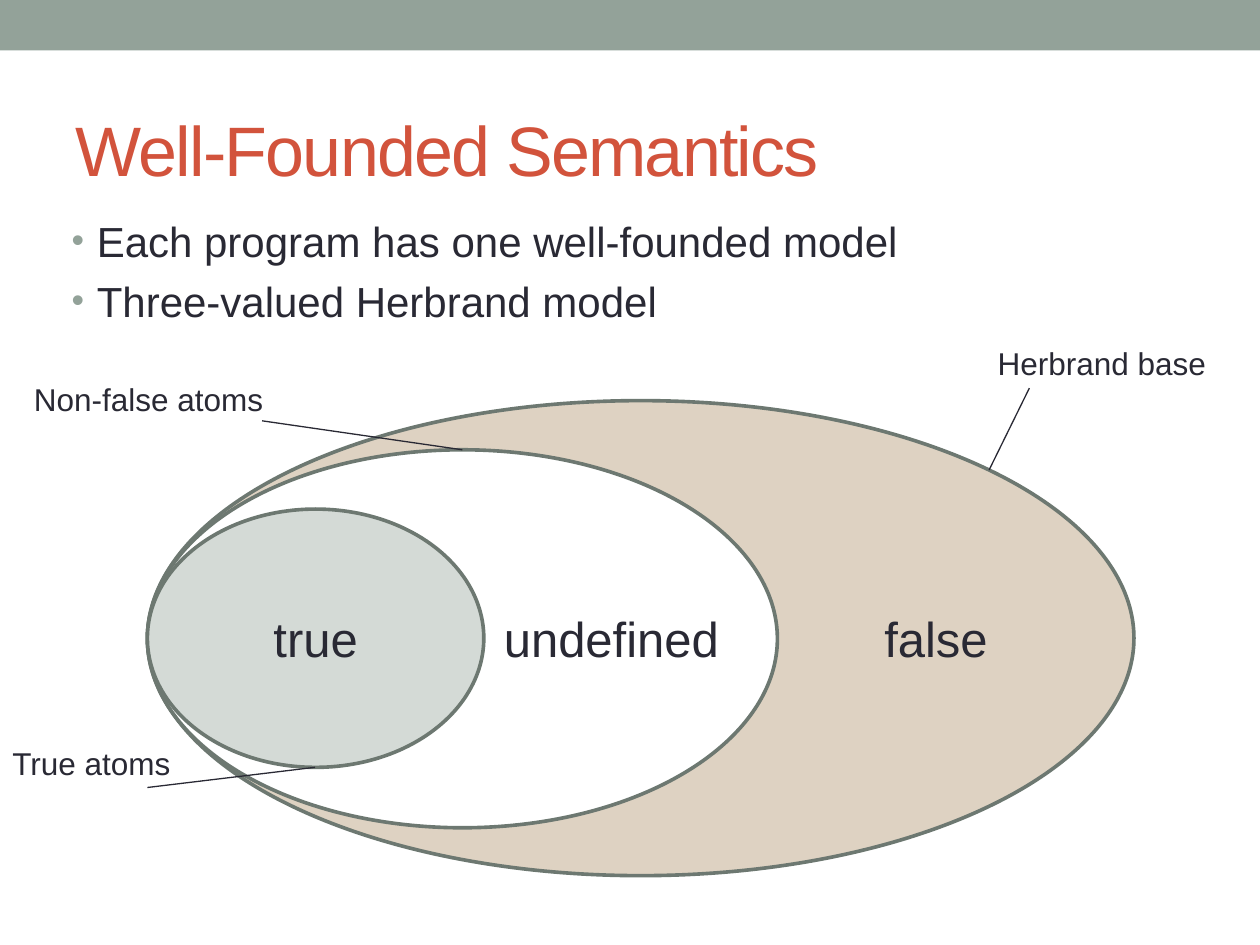
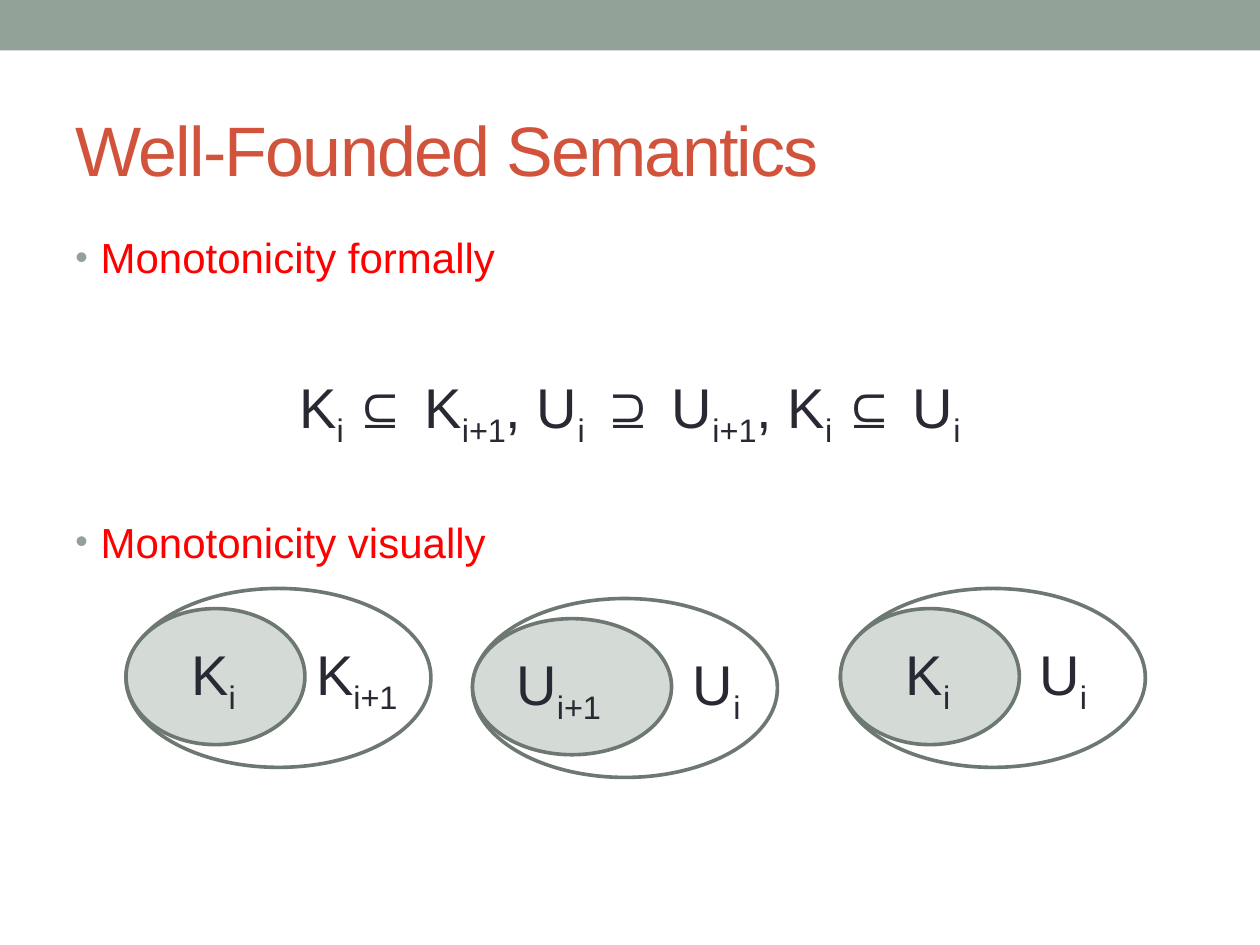
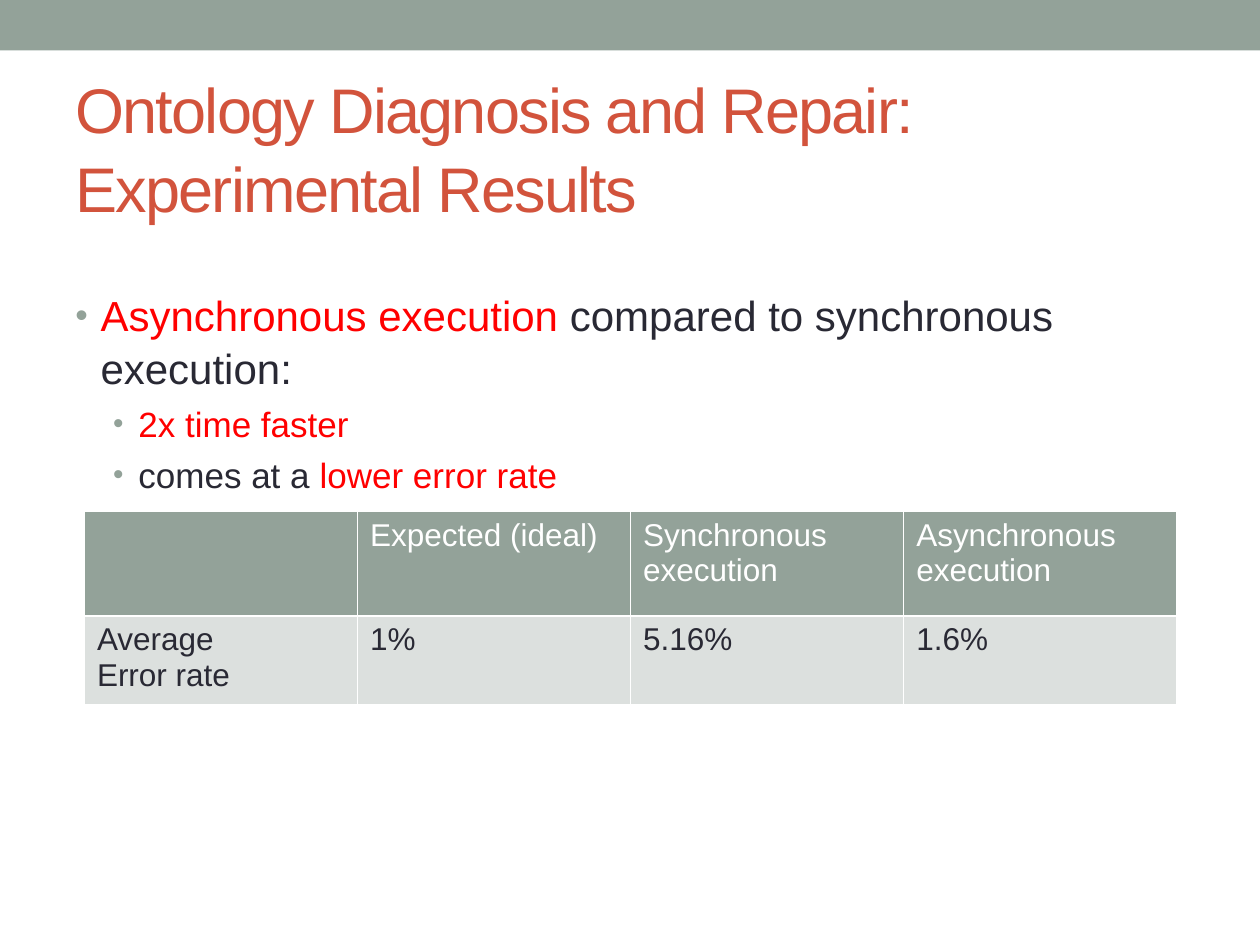
from lxml import etree
from pptx import Presentation
from pptx import util as u
from pptx.dml.color import RGBColor
from pptx.enum import shapes, text
from pptx.oxml import ns

FONT = "Arial"
SAGE, SAGE_DARK, SAGE_PALE = "93A299", "6D7871", "D4DAD6"
SAND, ROW_GREY, WHITE = "DED2C2", "DCE0DE", "FFFFFF"
INK, RED, RUST = "292934", "FF0000", "D2533C"
SUB = {"baseline": "-25000"}

color = RGBColor.from_string


def write(para, spans, size, hue=INK, extra={}):
    for words, special in spans:
        span = para.add_run()
        span.text = words
        for name, value in {"name": FONT, "size": u.Pt(size)}.items():
            setattr(span.font, name, value)
        span.font.color.rgb = color(special.get("hue", hue))
        for name, value in {**extra, **special}.items():
            if name != "hue":
                span.font._element.set(name, value)


def add_box(page, at, wrap=True, **settings):
    frame = page.shapes.add_textbox(*map(u.Inches, at)).text_frame
    for name, value in {"word_wrap": wrap, **settings}.items():
        setattr(frame, name, value)
    return frame


def indexed(letter, index):
    return [(letter, {}), (index, SUB)]


deck = Presentation()
deck.slide_width, deck.slide_height = u.Inches(10), u.Inches(7.5)

red = {"hue": RED}
formula = [("K", {}), ("i ", SUB), ("⊆ K", {}), ("i+1", SUB), (", U", {}), ("i", SUB),
           (" ⊇ U", {}), ("i+1", SUB), (", K", {}), ("i ", SUB), ("⊆ U", {}), ("i", SUB)]

model_ovals = [
    (1.17, 3.18, 7.83, 3.77, SAND, ""),
    (1.17, 3.57, 5, 3, WHITE, ""),
    (1.17, 4.04, 2.67, 2.05, SAGE_PALE, "true"),
]
model_labels = [
    (3.9, 4.78, 2.12, 28, [("undefined", {})]),
    (6.92, 4.78, 1.1, 28, [("false", {})]),
    (7.82, 2.68, 2, 18, [("Herbrand base", {})]),
    (0, 5.86, 1.59, 18, [("True atoms", {})]),
    (0.17, 2.97, 2.25, 18, [("Non-false atoms", {})]),
]
model_leaders = [(7.85, 3.73, 8.17, 3.08), (2.5, 6.09, 1.17, 6.25), (3.67, 3.57, 2.08, 3.34)]

chain_ovals, chain_labels = [], []
for left, top, inner_width, inner_gap, inner, outer_gap, outer in [
    (1, 4.67, 1.42, 0.42, ("K", "i"), 1.41, ("K", "i+1")),
    (3.75, 4.75, 1.58, 0.25, ("U", "i+1"), 1.65, ("U", "i")),
    (6.67, 4.67, 1.42, 0.42, ("K", "i"), 1.48, ("U", "i")),
]:
    chain_ovals.append((left, top, 2.42, 1.42, None, ""))
    chain_ovals.append((left, top + 0.16, inner_width, 1.08, SAGE_PALE, ""))
    for gap, sign in [(inner_gap, inner), (outer_gap, outer)]:
        width = 1.02 if sign[1] == "i+1" else 0.59
        chain_labels.append((left + gap, top + 0.36, width, 32, indexed(*sign)))

PAGES = [
    {"title": "Well-Founded Semantics", "title_size": 40,
     "body": (0.47, 1.62, 9, 4.95), "body_inset": 0.07,
     "points": [(24, 0.2, 0, [("Each program has one well-founded model", {})]),
                (24, 0.2, 4, [("Three-valued Herbrand model", {})])],
     "ovals": model_ovals, "labels": model_labels, "leaders": model_leaders},
    {"title": "Well-Founded Semantics", "title_size": 40,
     "body": (0.5, 1.75, 9, 5.33), "body_inset": 0.07,
     "points": [(24, 0.2, 0, [("Monotonicity formally", red)]),
                (32, None, 49.5, formula),
                (24, 0.2, 37, [("Monotonicity visually", red)])],
     "ovals": chain_ovals, "labels": chain_labels, "leaders": []},
    {"title": "Ontology Diagnosis and Repair: Experimental Results", "title_size": 36,
     "body": (0.5, 1.75, 9, 5.33), "body_inset": 0.53,
     "points": [(24, 0.2, 0, [("Asynchronous execution ", red),
                              ("compared to synchronous execution:", {})]),
                (20, 0.5, 4, [("2x time faster", red)]),
                (20, 0.5, 4, [("comes at a ", {}), ("lower error rate", red)])],
     "ovals": [], "labels": [], "leaders": []},
]

for content in PAGES:
    page = deck.slides.add_slide(deck.slide_layouts[6])
    band = page.shapes.add_shape(shapes.MSO_SHAPE.RECTANGLE, 0, 0, deck.slide_width, u.Inches(0.4))
    band.shadow.inherit = False
    band.fill.solid()
    band.fill.fore_color.rgb = color(SAGE)
    band.line.fill.background()

    body = add_box(page, content["body"], margin_top=u.Inches(content["body_inset"]))
    for number, (size, indent, before, spans) in enumerate(content["points"]):
        para = body.add_paragraph() if number else body.paragraphs[0]
        para.line_spacing = 1.05
        para.space_before = u.Pt(before)
        if indent is None:
            para.alignment = text.PP_ALIGN.CENTER
        else:
            layout = para._p.get_or_add_pPr()
            layout.set("marL", str(u.Inches(indent)))
            layout.set("indent", str(u.Inches(-0.2)))
            bullet_color = etree.SubElement(layout, ns.qn("a:buClr"))
            etree.SubElement(bullet_color, ns.qn("a:srgbClr"), val=SAGE)
            etree.SubElement(layout, ns.qn("a:buSzPct"), val="85000")
            etree.SubElement(layout, ns.qn("a:buFont"), typeface=FONT)
            etree.SubElement(layout, ns.qn("a:buChar"), char="•")
        write(para, spans, size)

    title = add_box(page, (0.5, 0.62, 9, 1.08), vertical_anchor=text.MSO_ANCHOR.MIDDLE)
    title.paragraphs[0].line_spacing = 1.05
    write(title.paragraphs[0], [(content["title"], {})], content["title_size"], RUST, {"spc": "-100"})

    for *at, fill, word in content["ovals"]:
        oval = page.shapes.add_shape(shapes.MSO_SHAPE.OVAL, *map(u.Inches, at))
        oval.shadow.inherit = False
        if fill:
            oval.fill.solid()
            oval.fill.fore_color.rgb = color(fill)
        else:
            oval.fill.background()
        oval.line.color.rgb = color(SAGE_DARK)
        oval.line.width = u.Pt(2.08)
        if word:
            oval.text_frame.vertical_anchor = text.MSO_ANCHOR.MIDDLE
            oval.text_frame.paragraphs[0].alignment = text.PP_ALIGN.CENTER
            write(oval.text_frame.paragraphs[0], [(word, {})], 28)

    for left, top, width, size, spans in content["labels"]:
        label = add_box(page, (left, top, width, size * 0.02), wrap=False)
        write(label.paragraphs[0], spans, size)

    for ends in content["leaders"]:
        leader = page.shapes.add_connector(shapes.MSO_CONNECTOR.STRAIGHT, *map(u.Inches, ends))
        leader.line.color.rgb = color(INK)
        leader.line.width = u.Pt(0.75)
        etree.SubElement(leader._element.spPr, ns.qn("a:effectLst"))

ROWS = [
    (0.83, SAGE, WHITE, ["", "Expected (ideal)", "Synchronous execution", "Asynchronous execution"]),
    (0.7, ROW_GREY, INK, ["Average\nError rate", "1%", "5.16%", "1.6%"]),
]
table = page.shapes.add_table(2, 4, *map(u.Inches, (0.67, 4.06, 8.67, 1.53))).table
table.first_row = table.horz_banding = False
for row, (height, fill, hue, words) in enumerate(ROWS):
    table.rows[row].height = u.Inches(height)
    for column, entry in enumerate(words):
        cell = table.cell(row, column)
        for side in ("a:lnL", "a:lnR", "a:lnT", "a:lnB"):
            border = etree.SubElement(cell._tc.get_or_add_tcPr(), ns.qn(side), w=str(u.Pt(1)))
            paint = etree.SubElement(border, ns.qn("a:solidFill"))
            etree.SubElement(paint, ns.qn("a:srgbClr"), val=WHITE)
        cell.fill.solid()
        cell.fill.fore_color.rgb = color(fill)
        cell.text = entry
        for para in cell.text_frame.paragraphs:
            para.font.size = u.Pt(18)
            for span in para.runs:
                span.font.name = FONT
                span.font.size = u.Pt(18)
                span.font.color.rgb = color(hue)

deck.save("out.pptx")
